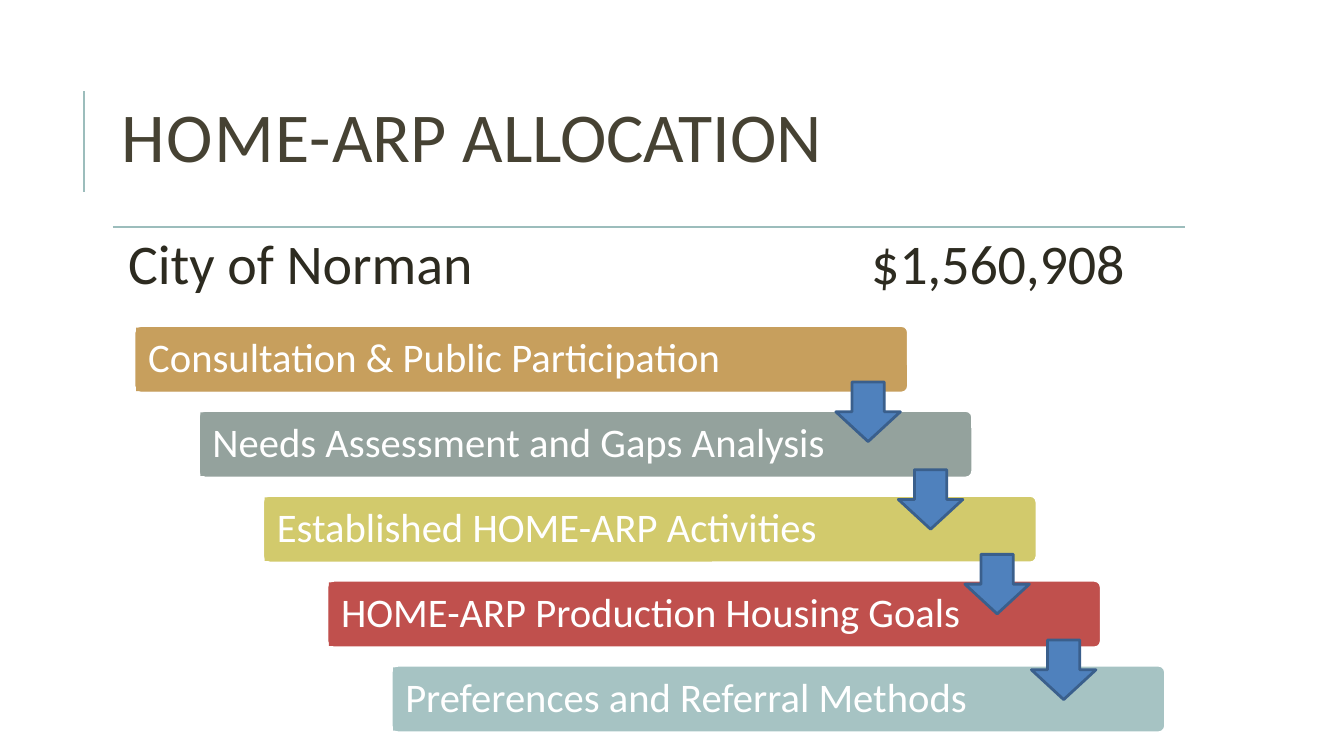
from pptx import Presentation
from pptx.dml.color import RGBColor
from pptx.enum.shapes import MSO_CONNECTOR, MSO_SHAPE
from pptx.enum.text import MSO_ANCHOR
from pptx.oxml.xmlchemy import OxmlElement
from pptx.util import Inches, Pt

WHITE = RGBColor(0xFF, 0xFF, 0xFF)
TITLE = RGBColor(0x46, 0x42, 0x33)
DARK = RGBColor(0x2D, 0x2B, 0x20)
RULE = RGBColor(0x9C, 0xBD, 0xBC)
BLUE = RGBColor(0x4F, 0x81, 0xBD)
NAVY = RGBColor(0x3A, 0x5F, 0x8C)
TAN = RGBColor(0xC7, 0x9F, 0x5D)
GRAY = RGBColor(0x94, 0xA2, 0x9D)
OLIVE = RGBColor(0xD2, 0xCA, 0x6C)
RED = RGBColor(0xC0, 0x50, 0x4D)
TEAL = RGBColor(0xA6, 0xC3, 0xC3)

deck = Presentation()
deck.slide_width = Inches(13.33)
deck.slide_height = Inches(7.5)
slide = deck.slides.add_slide(deck.slide_layouts[6])
shapes = slide.shapes


def add_text(left, top, width, height, parts, size, color):
    box = shapes.add_textbox(Inches(left), Inches(top), Inches(width), Inches(height))
    frame = box.text_frame
    frame.word_wrap = True
    frame.margin_left = frame.margin_right = frame.margin_bottom = 0
    frame.margin_top = Inches(0.01)
    line = frame.paragraphs[0]
    line.space_before = Pt(1)
    for words, gap in parts:
        run = line.add_run()
        run.text = words
        run.font.name = "Calibri"
        run.font.size = Pt(size)
        run.font.color.rgb = color
        run._r.get_or_add_rPr().set("spc", str(gap))


def add_block(kind, left, top, width, height, fill, edge=None):
    block = shapes.add_shape(kind, Inches(left), Inches(top), Inches(width), Inches(height))
    block.shadow.inherit = False
    block.fill.solid()
    block.fill.fore_color.rgb = fill
    if edge is None:
        block.line.fill.background()
    else:
        block.line.color.rgb = edge
        block.line.width = Pt(2)
    return block


for x1, y1, x2, y2, weight in [(0.83, 1.9, 0.83, 0.9, 1.5), (1.12, 2.25, 11.75, 2.25, 1.25)]:
    rule = shapes.add_connector(
        MSO_CONNECTOR.STRAIGHT, Inches(x1), Inches(y1), Inches(x2), Inches(y2))
    rule.line.color.rgb = RULE
    rule.line.width = Pt(weight)
    rule._element.spPr.append(OxmlElement("a:effectLst"))

add_text(1.21, 0.91, 8.57, 0.86, [("HOME-", 80), ("ARP ", 0), ("ALLOCATION", -10)], 50, TITLE)
add_text(1.27, 2.26, 3.56, 0.69, [("City of Norman", 0)], 40, DARK)
add_text(8.64, 2.26, 2.73, 0.7, [("$1,560,908", -10)], 40, DARK)

steps = [
    ("Consultation & Public Participation", TAN, 6.88),
    ("Needs Assessment and Gaps Analysis", GRAY, 6.63),
    ("Established HOME-ARP Activities", OLIVE, 6.63),
    ("HOME-ARP Production Housing Goals", RED, 6.63),
    ("Preferences and Referral Methods", TEAL, 6.63),
]
for i, (words, color, width) in enumerate(steps):
    left = 1.33 + 0.6375 * i
    top = 3.23 + 0.8425 * i
    bar = add_block(MSO_SHAPE.ROUNDED_RECTANGLE, left, top, 7.68, 0.67, color, WHITE)
    bar.adjustments[0] = 0.1
    label = add_block(MSO_SHAPE.RECTANGLE, left + 0.02, top + 0.02, width, 0.63, color)
    frame = label.text_frame
    frame.text = words
    frame.word_wrap = True
    frame.vertical_anchor = MSO_ANCHOR.MIDDLE
    frame.margin_left = frame.margin_right = Inches(0.12)
    frame.margin_top = frame.margin_bottom = Inches(0.12)
    line = frame.paragraphs[0]
    line.alignment = 1
    line.line_spacing = 0.9
    font = line.runs[0].font
    font.name = "Calibri"
    font.size = Pt(29)
    font.color.rgb = WHITE

for left, top in [(8.29, 3.79), (8.91, 4.66), (9.57, 5.5), (10.23, 6.35)]:
    add_block(MSO_SHAPE.DOWN_ARROW, left, top, 0.64, 0.59, BLUE, NAVY)

deck.save("out.pptx")
